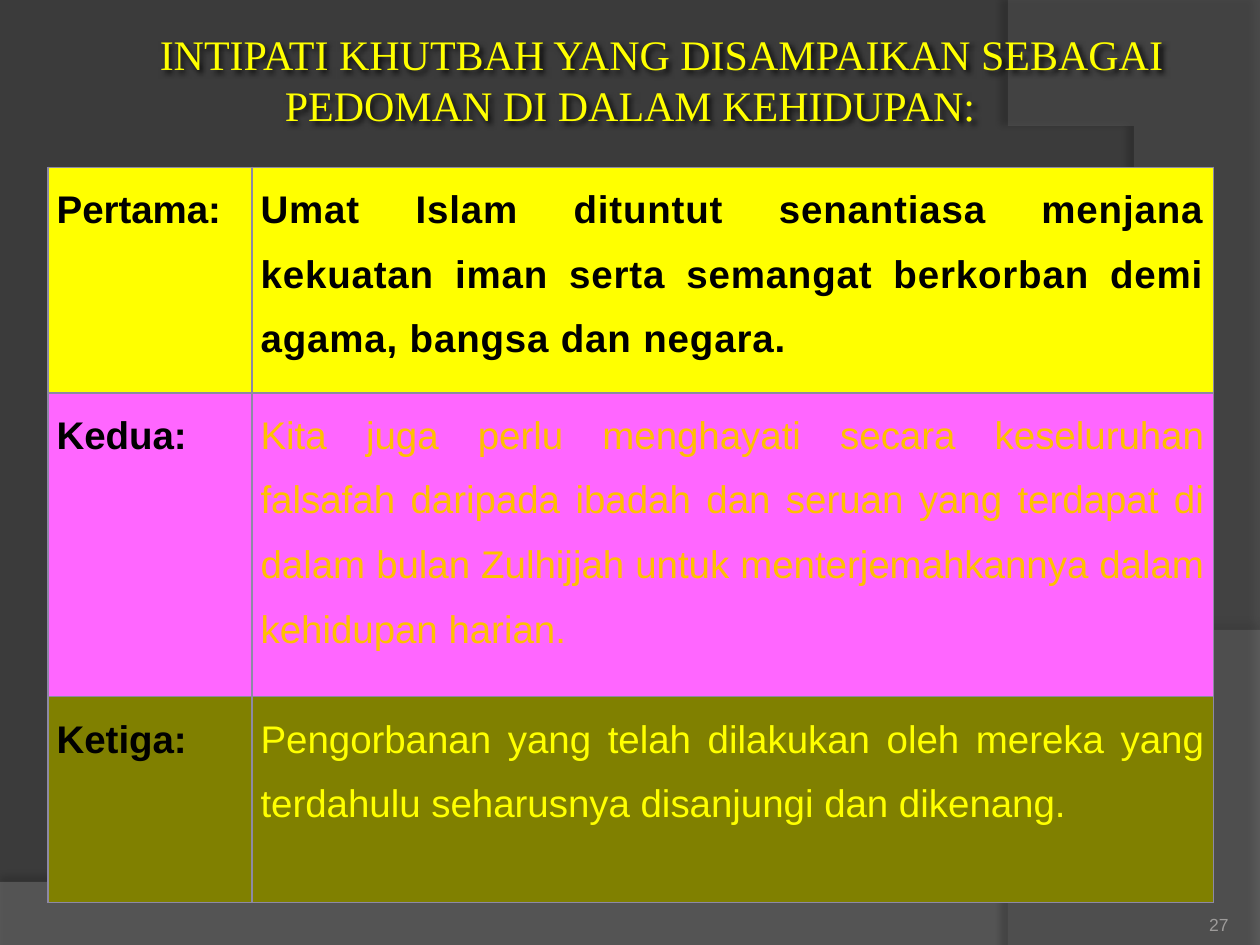
from lxml.etree import fromstring
from pptx import Presentation
from pptx.dml.color import RGBColor as Rgb
from pptx.enum.text import MSO_ANCHOR as Anchor, PP_ALIGN as Align
from pptx.util import Inches as In, Pt

WIDE, HIGH = 10, 7.5
NS = "http://schemas.openxmlformats.org/drawingml/2006/main"
HUE = dict(back="3B3B3B", wave="7F7F7F", arc="5E5E5E", page="9D9B9A", rule="8D89A4",
           black="000000", white="FFFFFF", sun="FFFF00", pink="FF66FF", olive="808000",
           gold="FFC000", edge="FFCC00", grey="717881")
ROWS = [
    ("Pertama:", "Umat Islam dituntut senantiasa menjana kekuatan iman serta semangat "
     "berkorban demi agama, bangsa dan negara.", "sun",
     dict(hue="black", bold=True, gap=0.5, edge=("grey", 1))),
    ("Kedua:", "Kita juga perlu menghayati secara keseluruhan falsafah daripada ibadah dan "
     "seruan yang terdapat di dalam bulan Zulhijjah untuk menterjemahkannya dalam kehidupan "
     "harian.", "pink", dict(hue="gold", edge=("edge", 1.45))),
    ("Ketiga:", "Pengorbanan yang telah dilakukan oleh mereka yang terdahulu seharusnya "
     "disanjungi dan dikenang.", "olive", dict(hue="sun", edge=("sun", 1.45))),
]


def xml(tag, body="", **attrs):
    """Make a drawing element from a tag, inner markup and attributes."""
    text = " ".join(f'{k}="{v}"' for k, v in attrs.items())
    return fromstring(f'<a:{tag} xmlns:a="{NS}" {text}>{body}</a:{tag}>')


def paint(hue):
    """Return solid fill markup for a named colour."""
    return f'<a:solidFill><a:srgbClr val="{HUE[hue]}"/></a:solidFill>'


def shade(shape, alpha, blur, dist, angle):
    """Give a shape a soft black shadow."""
    shape.shadow.inherit = False
    glow = xml("outerShdw", f'<a:srgbClr val="000000"><a:alpha val="{alpha * 1000}"/></a:srgbClr>',
               blurRad=Pt(blur), dist=Pt(dist), dir=angle * 60000, algn="ctr", rotWithShape=0)
    shape._element.spPr.find(f"{{{NS}}}effectLst").append(glow)


def write(frame, text, size=22, face="Arial", hue="black", bold=False, align=Align.JUSTIFY,
          line=None, gap=0, edge=None, inset=(0, 0), anchor=Anchor.TOP):
    """Write one formatted paragraph into a text frame."""
    frame.word_wrap = True
    frame.vertical_anchor = anchor
    frame.margin_left = frame.margin_right = In(inset[0])
    frame.margin_top = frame.margin_bottom = In(inset[1])
    para = frame.paragraphs[0]
    para.alignment, para.line_spacing = align, line
    run = para.add_run()
    run.text = text
    font = run.font
    font.size, font.name, font.bold = Pt(size), face, bold
    font.color.rgb = Rgb.from_string(HUE[hue])
    props = run._r.get_or_add_rPr()
    if gap:
        props.set("spc", str(int(gap * 100)))
    if edge:
        props.insert(0, xml("ln", paint(edge[0]), w=Pt(edge[1])))
    return para


def curve(knots, steps=40):
    """Sample a cubic curve given by four points."""
    for i in range(1, steps + 1):
        t = i / steps
        parts = ((1 - t) ** 3, 3 * t * (1 - t) ** 2, 3 * t * t * (1 - t), t ** 3)
        yield tuple(sum(w * k[axis] for w, k in zip(parts, knots)) for axis in (0, 1))


def sweep(slide, box, edges, knots, hue, alpha, glow):
    """Draw a translucent panel with one curved side in a box."""
    left, top, wide, high = box
    spots = [(left + x * wide, top + y * high) for x, y in [*edges, *curve(knots)]]
    pen = slide.shapes.build_freeform(*spots[0], scale=In(1))
    pen.add_line_segments(spots[1:], close=True)
    shape = pen.convert_to_shape()
    shape.fill.solid()
    shape.fill.fore_color.rgb = Rgb.from_string(HUE[hue])
    tint = shape._element.spPr.find(f".//{{{NS}}}srgbClr")
    tint.append(xml("alpha", val=alpha * 1000))
    shape.line.fill.background()
    shade(shape, *glow)


def decor(slide, box):
    """Place both background panels."""
    left, top, wide, high = box
    low = (left, top + 0.693 * high, wide, 0.308 * high)
    sweep(slide, low, [(0, 0.8), (0, 1), (1, 1), (1, 0)],
          [(1, 0), (0.559, 0.905), (0.391, 0.861), (0, 0.8)], "wave", 45, (35, 4, 3.5, 270))
    side = (left + 0.8 * wide, top, 0.2 * wide, high)
    sweep(slide, side, [(0, 0), (1, 0), (1, 1), (0.105, 1)],
          [(0.105, 1), (0.675, 0.825), (1.09, 0.4), (0, 0)], "arc", 40, (45, 4, 4, 180))


def page(slide, box):
    """Place the slide number."""
    note = slide.shapes.add_textbox(*map(In, box))
    write(note.text_frame, "27", size=10, hue="page", align=Align.RIGHT, anchor=Anchor.BOTTOM)


def points(slide, box):
    """Place the table of three lessons."""
    grid = slide.shapes.add_table(len(ROWS), 2, *map(In, box)).table
    grid.first_row = grid.horz_banding = False
    for col, share in zip(grid.columns, (0.175, 0.825)):
        col.width = In(box[2] * share)
    for row, share in zip(grid.rows, (0.307, 0.413, 0.28)):
        row.height = In(box[3] * share)
    for r, (label, text, fill, style) in enumerate(ROWS):
        for c, (words, form) in enumerate([(label, dict(bold=True)), (text, style)]):
            cell = grid.cell(r, c)
            cell.margin_left = cell.margin_right = In(0.07)
            cell.margin_top = cell.margin_bottom = 0
            write(cell.text_frame, words, line=1.5, inset=(0.07, 0), **form)
            cell.fill.solid()
            cell.fill.fore_color.rgb = Rgb.from_string(HUE[fill])
            props = cell._tc.get_or_add_tcPr()
            for i, tag in enumerate(("lnL", "lnR", "lnT", "lnB")):
                props.insert(i, xml(tag, paint("rule"), w=Pt(1)))


def title(slide, box):
    """Place the shadowed heading with its first line indented."""
    head = slide.shapes.add_textbox(*map(In, box))
    para = write(head.text_frame, "INTIPATI KHUTBAH YANG DISAMPAIKAN SEBAGAI PEDOMAN DI DALAM "
                 "KEHIDUPAN:", size=24, face="Times New Roman", hue="sun", align=Align.CENTER,
                 edge=("white", 1.45), inset=(0.1, 0.05))
    para._p.get_or_add_pPr().set("indent", str(In(0.5)))
    shade(head, 80, 3, 2, 45)


def main():
    """Build and save the slide."""
    deck = Presentation()
    deck.slide_width, deck.slide_height = In(WIDE), In(HIGH)
    slide = deck.slides.add_slide(deck.slide_layouts[6])
    slide.background.fill.solid()
    slide.background.fill.fore_color.rgb = Rgb.from_string(HUE["back"])
    decor(slide, (0, 0, WIDE, HIGH))
    page(slide, (0.892 * WIDE, 0.936 * HIGH, 0.083 * WIDE, 0.053 * HIGH))
    points(slide, (0.038 * WIDE, 0.177 * HIGH, 0.925 * WIDE, 0.778 * HIGH))
    title(slide, (0.025 * WIDE, 0.024 * HIGH, 0.95 * WIDE, 0.121 * HIGH))
    deck.save("out.pptx")


if __name__ == "__main__":
    main()
